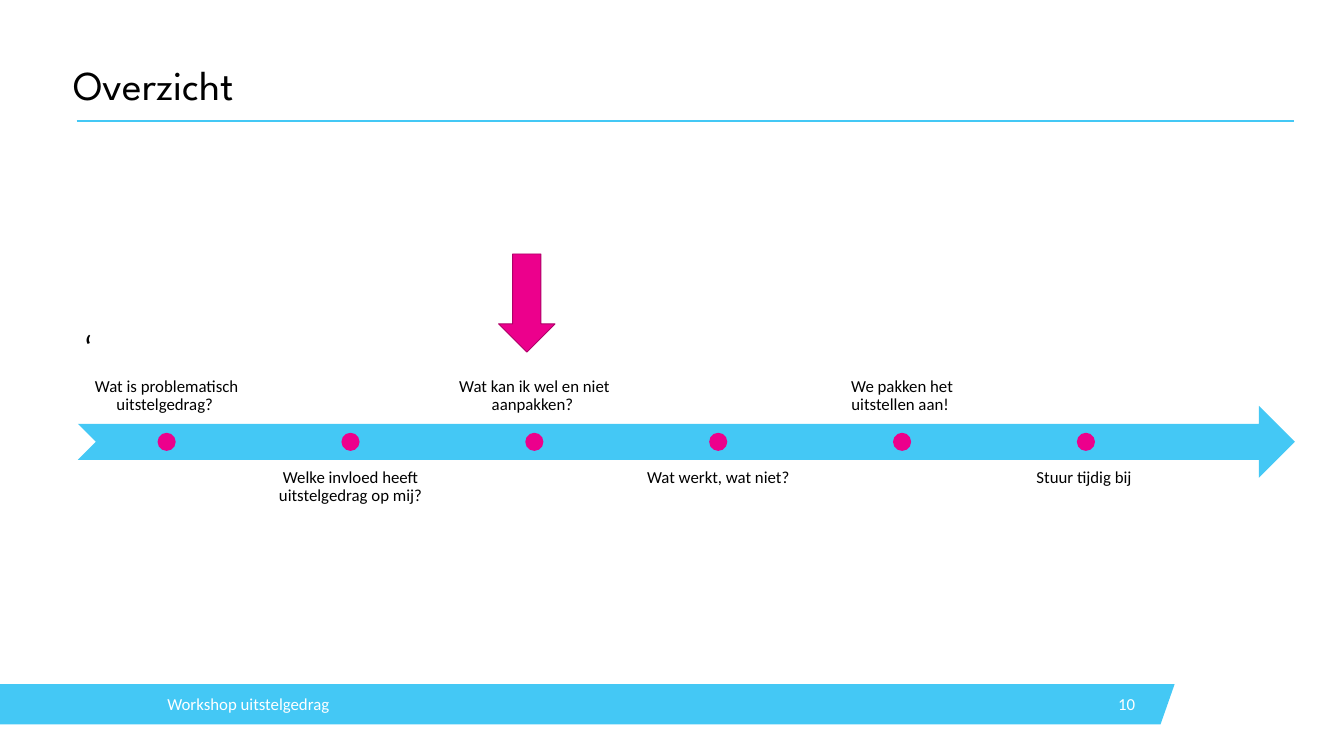
from dataclasses import dataclass
from typing import Any

from lxml import etree
from pptx import Presentation
from pptx.dml.color import RGBColor
from pptx.enum import shapes, text
from pptx.oxml import ns
from pptx.util import Inches, Pt

Kind = shapes.MSO_SHAPE
Anchor = text.MSO_ANCHOR
Align = text.PP_ALIGN


@dataclass(frozen=True)
class Theme:
    blue: str = "44C8F5"
    pink: str = "EC008C"
    plum: str = "AF0068"
    black: str = "000000"
    white: str = "FFFFFF"
    head: str = "League Spartan"
    body: str = "Calibri"
    title: int = 44
    large: int = 36
    small: int = 18


@dataclass(frozen=True)
class Box:
    left: float
    top: float
    width: float
    height: float

    def place(self) -> list[int]:
        return [Inches(v) for v in (self.left, self.top, self.width, self.height)]


@dataclass(frozen=True)
class Label:
    words: str
    box: Box
    size: int = Theme.small
    color: str = Theme.black
    font: str = Theme.body
    align: Any = Align.LEFT
    anchor: Any = Anchor.TOP
    pad: tuple[float, float] = (0, 0)
    space: float = 1


THEME = Theme()
STEPS = (
    "Wat is problematisch uitstelgedrag? ",
    "Welke invloed heeft uitstelgedrag op mij?",
    "Wat kan ik wel en niet aanpakken? ",
    "Wat werkt, wat niet?",
    "We pakken het uitstellen aan! ",
    "Stuur tijdig bij ",
)
FIRST, LAST = 2.48, 16.16  # centres of the outer dots
AXIS = 6.575
DOT = 0.27
WIDE, HIGH = 2.61, 1.07


def paint(shape: Any, fill: str, line: str | None = None) -> None:
    shape.shadow.inherit = False
    shape.fill.solid()
    shape.fill.fore_color.rgb = RGBColor.from_string(fill)
    if line:
        shape.line.color.rgb = RGBColor.from_string(line)
        shape.line.width = Pt(1)
    else:
        shape.line.fill.background()


def draw(slide: Any, kind: Any, box: Box, fill: str, line: str | None = None) -> None:
    paint(slide.shapes.add_shape(kind, *box.place()), fill, line)


def write(slide: Any, label: Label) -> None:
    frame = slide.shapes.add_textbox(*label.box.place()).text_frame
    frame.word_wrap = True
    frame.vertical_anchor = label.anchor
    side, edge = (Inches(v) for v in label.pad)
    frame.margin_left = frame.margin_right = side
    frame.margin_top = frame.margin_bottom = edge
    para = frame.paragraphs[0]
    para.alignment = label.align
    para.line_spacing = label.space
    run = para.add_run()
    run.text = label.words
    run.font.name = label.font
    run.font.size = Pt(label.size)
    run.font.color.rgb = RGBColor.from_string(label.color)


def rule(slide: Any) -> None:
    """Draw the line under the title."""
    line = slide.shapes.add_connector(
        shapes.MSO_CONNECTOR.STRAIGHT,
        Inches(1.14), Inches(1.8), Inches(19.25), Inches(1.8),
    )
    line.line.color.rgb = RGBColor.from_string(THEME.blue)
    line.line.width = Pt(2.25)
    etree.SubElement(line._element.spPr, ns.qn("a:effectLst"))


def footer(slide: Any) -> None:
    pen = slide.shapes.build_freeform(Inches(0), Inches(10.18))
    pen.add_line_segments(
        [(Inches(x), Inches(y)) for x, y in ((17.48, 10.18), (17.27, 10.78), (0, 10.78))]
    )
    paint(pen.convert_to_shape(), THEME.blue)
    write(slide, Label("Workshop uitstelgedrag", Box(2.49, 10.18, 6.75, 0.6),
                       color=THEME.white, anchor=Anchor.MIDDLE))
    write(slide, Label("10", Box(15.9, 10.18, 1.09, 0.6), color=THEME.white,
                       align=Align.RIGHT, anchor=Anchor.MIDDLE, pad=(0.1, 0.05)))


def timeline(slide: Any) -> None:
    """Draw the arrow with dots, labels alternating above and below it."""
    draw(slide, Kind.NOTCHED_RIGHT_ARROW, Box(1.16, 6.04, 18.11, HIGH), THEME.blue)
    gap = (LAST - FIRST) / (len(STEPS) - 1)
    for i, words in enumerate(STEPS):
        mid = FIRST + i * gap
        above = i % 2 == 0
        top, anchor = (5.24, Anchor.BOTTOM) if above else (6.84, Anchor.TOP)
        write(slide, Label(words, Box(mid - WIDE / 2, top, WIDE, HIGH),
                           align=Align.CENTER, anchor=anchor,
                           pad=(0.14, 0.14), space=0.9))
        draw(slide, Kind.OVAL, Box(mid - DOT / 2, AXIS - DOT / 2, DOT, DOT), THEME.pink)


def main() -> None:
    deck = Presentation()
    deck.slide_width, deck.slide_height = Inches(20), Inches(11.25)
    slide = deck.slides.add_slide(deck.slide_layouts[6])
    footer(slide)
    rule(slide)
    write(slide, Label("Overzicht", Box(1.09, 0.97, 18.13, 0.69),
                       size=THEME.title, font=THEME.head, space=0.9))
    write(slide, Label("‘", Box(1.15, 4.87, 18.13, 0.7), size=THEME.large,
                       pad=(0.1, 0.05), space=0.9))
    timeline(slide)
    draw(slide, Kind.DOWN_ARROW, Box(7.42, 3.78, 0.84, 1.46), THEME.pink, THEME.plum)
    deck.save("out.pptx")


if __name__ == "__main__":
    main()
